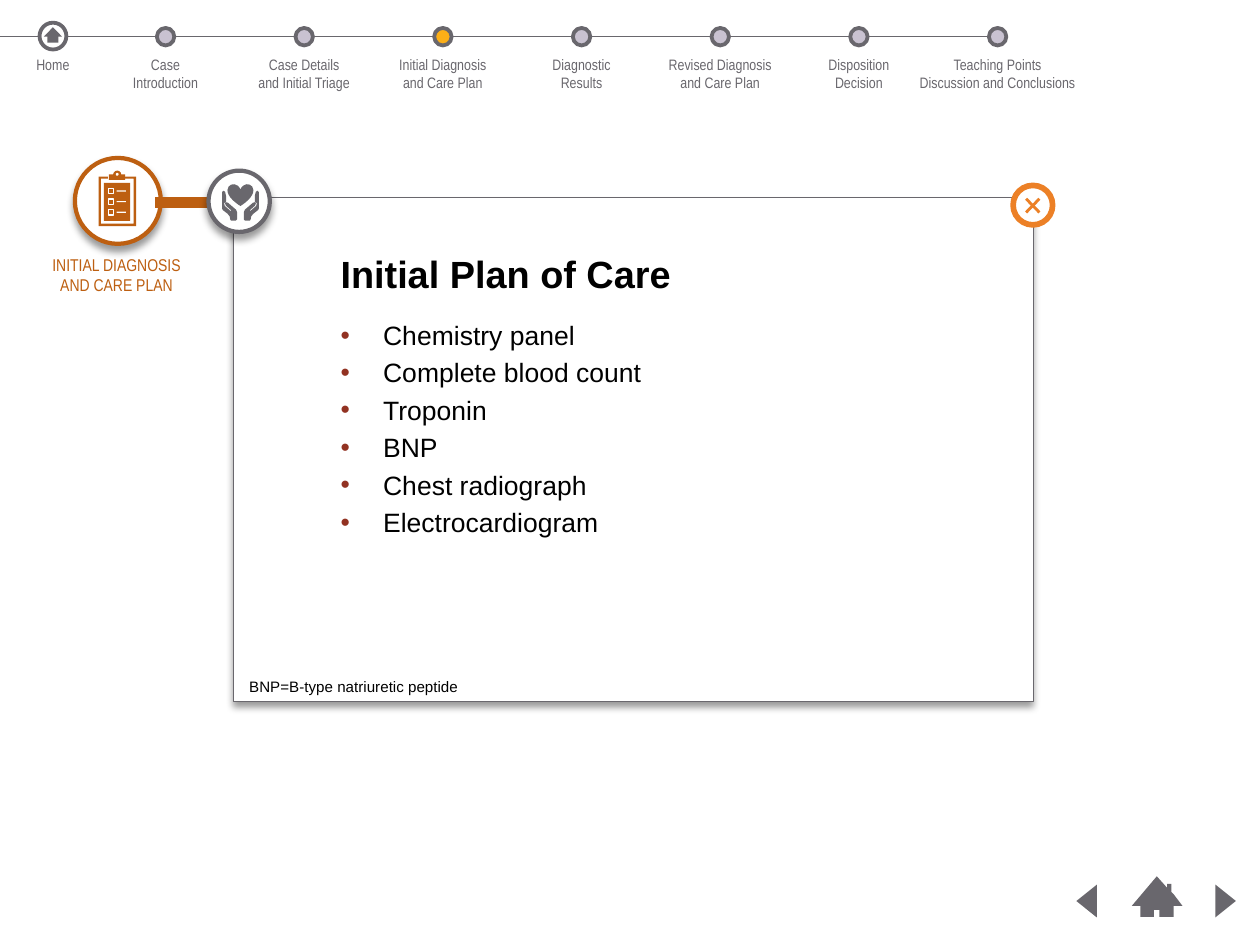
import pptx
import pptx.util
import pptx.dml.color
import pptx.enum.shapes
import pptx.enum.text
import pptx.oxml
import pptx.oxml.ns

Pt = pptx.util.Pt
SHAPE = pptx.enum.shapes.MSO_SHAPE
ALIGN = pptx.enum.text.PP_ALIGN
GRAY, RUST, ORANGE = "69676D", "BD5F11", "EC8026"
LILAC, GOLD, WHITE, BLACK = "C9C2D1", "FCAF17", "FFFFFF", "000000"
DRAWING = 'xmlns:a="http://schemas.openxmlformats.org/drawingml/2006/main"'

STEPS = [
    (["Case", "Introduction"], 48),
    (["Case Details", "and Initial Triage"], 62),
    (["Initial Diagnosis", "and Care Plan"], 62),
    (["Diagnostic", "Results"], 46),
    (["Revised Diagnosis", "and Care Plan"], 68),
    (["Disposition", "Decision"], 46),
    (["Teaching Points", "Discussion and Conclusions"], 96),
]
CURRENT_STEP = 2
ORDERS = ["Chemistry panel", "Complete blood count", "Troponin", "BNP",
          "Chest radiograph", "Electrocardiogram"]
HAND = [(7.6, 106.6), (7.6, 103.7), (8.1, 101.5), (8.9, 100.8), (9.7, 101.5),
        (9.7, 110.2), (9.4, 111), (6.8, 113), (5.7, 114.4), (5.4, 116),
        (5, 116.6), (2.4, 116.6), (1.8, 116), (1.8, 112.3), (2.3, 110.9),
        (6.6, 107.2), (7.6, 106.9), (8.2, 107.4), (7.7, 108.7), (4.9, 111.2),
        (5.2, 111.6), (8.3, 108.9), (8.7, 107.4)]
BOARD_FRAME = [(66.2, 93.4), (66.2, 94.5), (70.7, 94.5), (70.7, 118.3),
               (53.4, 118.3), (53.4, 94.5), (57.1, 94.5), (57.1, 93.4),
               (52.1, 93.4), (52.1, 119.6), (72, 119.6), (72, 93.4)]
HOUSE = [(620.6, 473), (619.2, 471.6), (619.2, 467.3), (617, 467.3),
         (617, 469.4), (611.5, 463.2), (598.3, 478.8), (602.8, 478.8),
         (602.8, 484.6), (610, 484.6), (610, 481), (612.8, 481),
         (612.8, 484.6), (620.4, 484.6), (620.4, 478.8), (625, 478.8)]


def color(hex_value):
    return pptx.dml.color.RGBColor.from_string(hex_value)


def paint(shape, fill, line=None, weight=1):
    shape.shadow.inherit = False
    if fill:
        shape.fill.solid()
        shape.fill.fore_color.rgb = color(fill)
    else:
        shape.fill.background()
    if line:
        shape.line.color.rgb = color(line)
        shape.line.width = Pt(weight)
    else:
        shape.line.fill.background()
    return shape


def add_figure(page, kind, left, top, width, height, fill, line=None, weight=1):
    shape = page.shapes.add_shape(kind, Pt(left), Pt(top), Pt(width), Pt(height))
    return paint(shape, fill, line, weight)


def add_outline(page, points, fill):
    grid = [(x * 100, y * 100) for x, y in points]
    builder = page.shapes.build_freeform(*grid[0], scale=Pt(1) / 100)
    builder.add_line_segments(grid[1:], close=True)
    return paint(builder.convert_to_shape(), fill)


def add_rule(page, x1, y1, x2, y2, line, weight):
    rule = page.shapes.add_connector(
        pptx.enum.shapes.MSO_CONNECTOR.STRAIGHT, Pt(x1), Pt(y1), Pt(x2), Pt(y2))
    rule.line.color.rgb = color(line)
    rule.line.width = Pt(weight)
    rule.element.spPr.append(pptx.oxml.parse_xml(f"<a:effectLst {DRAWING}/>"))


def add_shadow(shape):
    effects = shape.element.spPr.find(pptx.oxml.ns.qn("a:effectLst"))
    effects.append(pptx.oxml.parse_xml(
        f'<a:outerShdw {DRAWING} blurRad="{Pt(4)}" dist="{Pt(3)}" dir="5400000" '
        'rotWithShape="0"><a:srgbClr val="000000"><a:alpha val="40000"/>'
        '</a:srgbClr></a:outerShdw>'))


def set_insets(frame, side, top):
    frame.margin_left = frame.margin_right = Pt(side)
    frame.margin_top = frame.margin_bottom = Pt(top)


def add_span(para, text, size, font, ink, bold=False):
    span = para.add_run()
    span.text = text
    span.font.size = Pt(size)
    span.font.name = font
    span.font.bold = bold
    span.font.color.rgb = color(ink)


def add_label(page, lines, left, top, width, height, size, font, ink,
              align=ALIGN.CENTER, insets=(2.9, 2.9)):
    box = page.shapes.add_textbox(Pt(left), Pt(top), Pt(width), Pt(height))
    frame = box.text_frame
    frame.word_wrap = True
    set_insets(frame, *insets)
    for index, line in enumerate(lines):
        para = frame.add_paragraph() if index else frame.paragraphs[0]
        para.alignment = align
        add_span(para, line, size, font, ink)


def add_bullet(para, ink):
    props = para._p.get_or_add_pPr()
    props.set("marL", str(Pt(22.5)))
    props.set("indent", str(-Pt(22.5)))
    for xml in (f'<a:buClr {DRAWING}><a:srgbClr val="{ink}"/></a:buClr>',
                f'<a:buFont {DRAWING} typeface="Arial"/>',
                f'<a:buChar {DRAWING} char="•"/>'):
        props.append(pptx.oxml.parse_xml(xml))


def add_plan_panel(page):
    panel = add_figure(page, SHAPE.RECTANGLE, 123.4, 104.4, 423, 266.4, WHITE, GRAY, 0.25)
    add_shadow(panel)
    frame = panel.text_frame
    frame.word_wrap = True
    frame.vertical_anchor = pptx.enum.text.MSO_ANCHOR.TOP
    set_insets(frame, 56.6, 28)
    frame.margin_top = Pt(64.2)
    for index, order in enumerate(ORDERS):
        para = frame.add_paragraph() if index else frame.paragraphs[0]
        para.alignment = ALIGN.LEFT
        para.space_after = Pt(3)
        add_bullet(para, "923222")
        add_span(para, order, 14, "Arial", BLACK)

    title = page.shapes.title
    title.element.addprevious(panel.element)
    title.left, title.top, title.width, title.height = Pt(180), Pt(132.4), Pt(310), Pt(23)
    frame = title.text_frame
    frame.vertical_anchor = pptx.enum.text.MSO_ANCHOR.TOP
    set_insets(frame, 0, 0)
    frame.paragraphs[0].alignment = ALIGN.LEFT
    add_span(frame.paragraphs[0], "Initial Plan of Care", 20, "Arial", BLACK, True)


def add_clipboard(page):
    add_figure(page, SHAPE.RECTANGLE, 54.9, 96.6, 13.9, 20.2, RUST)
    add_outline(page, BOARD_FRAME, RUST)
    add_figure(page, SHAPE.OVAL, 59.8, 90.2, 4.3, 4.3, RUST)
    add_figure(page, SHAPE.RECTANGLE, 57.6, 92.2, 8.6, 2.9, RUST)
    add_figure(page, SHAPE.OVAL, 61.2, 91.4, 1.5, 1.5, WHITE)
    for row in range(3):
        top = 99.6 + 5.6 * row
        add_figure(page, SHAPE.RECTANGLE, 57.2, top, 2.8, 2.8, None, WHITE, 0.7)
        add_figure(page, SHAPE.RECTANGLE, 61.7, top + 1.1, 4.9, 0.6, WHITE)


def add_caring_hands(page):
    axis = 127.1
    add_figure(page, SHAPE.HEART, axis - 6.8, 97.2, 13.6, 11.7, GRAY)
    for side in (1, -1):
        add_outline(page, [(axis + side * x, y) for x, y in HAND], GRAY)


def add_close_button(page):
    add_figure(page, SHAPE.OVAL, 535.5, 98, 20.9, 20.9, WHITE, ORANGE, 3)
    for start, end in ((105.1, 112.3), (112.3, 105.1)):
        add_rule(page, 542.4, start, 549.4, end, ORANGE, 1.5)


def add_timeline(page):
    add_rule(page, 0, 19.4, 522.7, 19.4, GRAY, 0.75)
    for index, (lines, width) in enumerate(STEPS):
        center = 87.5 + 73.3 * index
        fill = GOLD if index == CURRENT_STEP else LILAC
        add_figure(page, SHAPE.OVAL, center - 4.6, 14.8, 9.2, 9.2, fill, GRAY, 2)
        add_label(page, lines, center - width / 2, 26.6, width, 25, 8, "Arial Narrow", GRAY)
    add_figure(page, SHAPE.OVAL, 20.9, 12, 14.2, 14.2, WHITE, GRAY, 2)
    add_figure(page, SHAPE.ISOSCELES_TRIANGLE, 23.2, 14.4, 9.6, 5, GRAY)
    add_figure(page, SHAPE.RECTANGLE, 25.1, 19, 5.8, 3.6, GRAY)
    add_label(page, ["Home"], 13, 26.6, 30, 15, 8, "Arial Narrow", GRAY)


def add_navigation(page):
    for left, turn in ((565.7, 270), (639.2, 90)):
        arrow = add_figure(page, SHAPE.ISOSCELES_TRIANGLE, left, 470.9, 17.3, 10.8, GRAY)
        arrow.rotation = turn
    add_outline(page, HOUSE, GRAY)


def main():
    deck = pptx.Presentation()
    deck.slide_width, deck.slide_height = Pt(666), Pt(499)
    page = deck.slides.add_slide(deck.slide_layouts[5])
    add_plan_panel(page)
    add_shadow(add_figure(page, SHAPE.OVAL, 39.6, 83.5, 45.4, 45.4, WHITE, RUST, 2.25))
    add_rule(page, 82.1, 107.1, 112.3, 107.1, RUST, 6)
    add_close_button(page)
    add_clipboard(page)
    add_shadow(add_figure(page, SHAPE.OVAL, 110.2, 90.2, 32.4, 32.4, WHITE, GRAY, 2.25))
    add_caring_hands(page)
    add_label(page, ["INITIAL DIAGNOSIS", "AND CARE PLAN"], 18, 131, 87.1, 28.8,
              9, "Arial Narrow", RUST, insets=(7.2, 3.6))
    add_label(page, ["BNP=B-type natriuretic peptide"], 124.6, 354.5, 423, 17.3,
              8, "Arial", BLACK, ALIGN.LEFT, (7.2, 3.6))
    add_timeline(page)
    add_navigation(page)
    deck.save("out.pptx")


if __name__ == "__main__":
    main()
